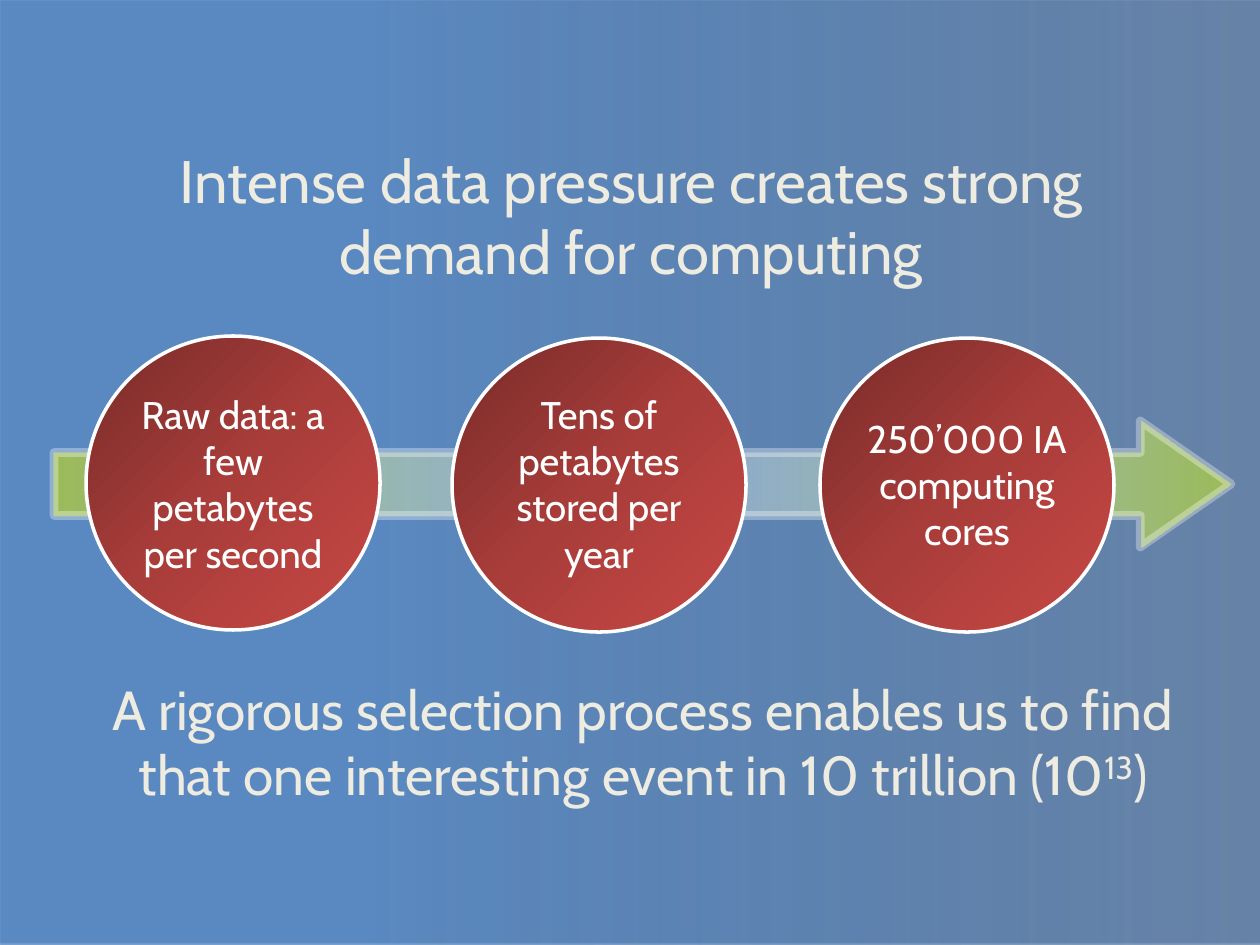
import pptx
import pptx.util
import pptx.dml.color
import pptx.enum.shapes
import pptx.enum.text
import pptx.oxml
import pptx.oxml.ns

PX = 914400 / 126
THEME = {
    "font": "Cabin", "cream": "EEECE1", "white": "FFFFFF",
    "title": 34.2, "closing": 31.4, "circle": 22,
    "backdrop": [(29, "4F81BD", 93), (100, "1F497D", 67)],
    "arrow": [(0, "9BBB59", 100), (51, "C6D9F0", 43), (100, "9BBB59", 100)],
    "red": [(0, "772B29", 100), (50, "A93D3A", 100), (100, "C94844", 100)],
}
SHAPE = pptx.enum.shapes.MSO_SHAPE

prs = pptx.Presentation()
prs.slide_width = pptx.util.Inches(10)
prs.slide_height = pptx.util.Inches(7.5)
s = prs.slides.add_slide(prs.slide_layouts[6])


def add_gradient_shape(kind, box, stops, angle, line_width):
    sp = s.shapes.add_shape(kind, *[round(v * PX) for v in box])
    sp.shadow.inherit = False
    sp.fill.background()
    gs = "".join(
        f'<a:gs pos="{pos * 1000}"><a:srgbClr val="{color}">'
        f'<a:alpha val="{alpha * 1000}"/></a:srgbClr></a:gs>'
        for pos, color, alpha in stops)
    grad = pptx.oxml.parse_xml(
        f'<a:gradFill {pptx.oxml.ns.nsdecls("a")} rotWithShape="1"><a:gsLst>{gs}</a:gsLst>'
        f'<a:lin ang="{angle * 60000}" scaled="0"/></a:gradFill>')
    spPr = sp._element.spPr
    spPr.replace(spPr.find(pptx.oxml.ns.qn("a:noFill")), grad)
    if line_width:
        sp.line.color.rgb = pptx.dml.color.RGBColor.from_string(THEME["white"])
        sp.line.width = pptx.util.Pt(line_width)
    else:
        sp.line.fill.background()
    return sp


def add_text(box, parts, size, color, grow=False):
    tf = s.shapes.add_textbox(*[round(v * PX) for v in box]).text_frame
    tf.word_wrap = True
    tf.vertical_anchor = pptx.enum.text.MSO_ANCHOR.MIDDLE
    if grow:
        tf.auto_size = pptx.enum.text.MSO_AUTO_SIZE.SHAPE_TO_FIT_TEXT
    p = tf.paragraphs[0]
    p.alignment = pptx.enum.text.PP_ALIGN.CENTER
    for part in parts:
        r = p.add_run()
        r.text = part
        r.font.name = THEME["font"]
        r.font.size = pptx.util.Pt(size)
        r.font.color.rgb = pptx.dml.color.RGBColor.from_string(color)
    return p


add_gradient_shape(SHAPE.RECTANGLE, (0, 0, 1270, 945), THEME["backdrop"], 0, 0)
add_text((64, 136, 1134, 158), ["Intense data pressure creates strong demand for computing"],
         THEME["title"], THEME["cream"])

arrow = add_gradient_shape(SHAPE.RIGHT_ARROW, (54, 421, 1177, 126), THEME["arrow"], 0, 5)
arrow.adjustments[0] = 0.5
arrow.adjustments[1] = 0.72
line_color = arrow.line._ln.find(".//" + pptx.oxml.ns.qn("a:srgbClr"))
line_color.append(pptx.oxml.parse_xml(f'<a:alpha {pptx.oxml.ns.nsdecls("a")} val="32000"/>'))

circles = [
    (86, 336, 384, 199, "Raw data: a few petabytes per second"),
    (452, 338, 384, 199, "Tens of petabytes stored per year"),
    (820, 338, 408, 152, "250’000 IA computing cores"),
]
for left, top, text_top, text_height, text in circles:
    add_gradient_shape(SHAPE.OVAL, (left, top, 294, 294), THEME["red"], 45, 2)
    add_text((left + 26, text_top, 242, text_height), [text],
             THEME["circle"], THEME["white"], grow=True)

p = add_text((76, 662, 1134, 158),
             ["A rigorous selection process enables us to find that one interesting event "
              "in 10 trillion (10", "13", ")"],
             THEME["closing"], THEME["cream"])
p.runs[1].font._element.set("baseline", "30000")

prs.save("out.pptx")
